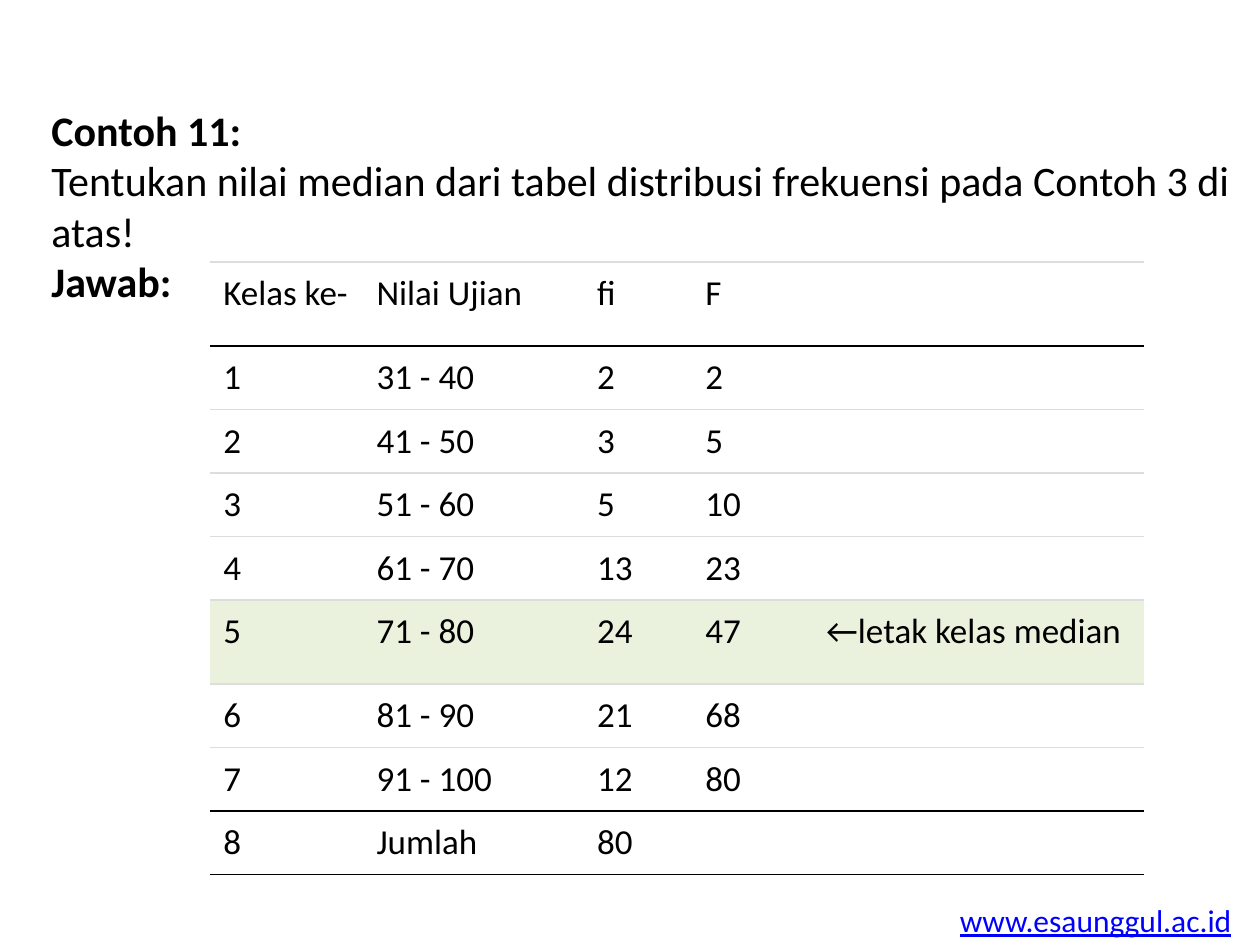
import pptx
import pptx.dml.color
import pptx.oxml
import pptx.oxml.ns
import pptx.util

Pt = pptx.util.Pt
RGBColor = pptx.dml.color.RGBColor

BLACK = RGBColor(0x00, 0x00, 0x00)
GREY = RGBColor(0xDD, 0xDD, 0xDD)
LINK_BLUE = RGBColor(0x00, 0x00, 0xFF)
MEDIAN_GREEN = RGBColor(0xEA, 0xF1, 0xDD)

QUESTION = [
    ("Contoh 11:", True),
    ("Tentukan nilai median dari tabel distribusi frekuensi pada Contoh 3 di atas!", False),
    ("Jawab:", True),
]
WEBSITE = "www.esaunggul.ac.id"
FREQUENCIES = [
    ("Kelas ke-", "Nilai Ujian", "fi", "F", ""),
    ("1", "31 - 40", "2", "2", ""),
    ("2", "41 - 50", "3", "5", ""),
    ("3", "51 - 60", "5", "10", ""),
    ("4", "61 - 70", "13", "23", ""),
    ("5", "71 - 80", "24", "47", "←letak kelas median"),
    ("6", "81 - 90", "21", "68", ""),
    ("7", "91 - 100", "12", "80", ""),
    ("8", "Jumlah", "80", "", ""),
]
MEDIAN_ROW = 5
TALL_ROWS = (0, MEDIAN_ROW)
COLUMN_WIDTHS = (87.6, 126, 61.9, 69.1, 189.4)
TALL_HEIGHT, ROW_HEIGHT = 48, 36.3
TABLE_LEFT, TABLE_TOP = 120, 149.8
# Rules counted from the top edge of the table
BLACK_RULES = (1, len(FREQUENCIES) - 1, len(FREQUENCIES))
CELL_MARGINS = {"margin_left": 7.6, "margin_right": 7.6, "margin_top": 5.95, "margin_bottom": 5.95}


def write(paragraph, text, size, color=BLACK, bold=False, underline=False):
    run = paragraph.add_run()
    run.text = text
    values = {"name": "Calibri", "size": Pt(size), "bold": bold, "underline": underline}
    for name, value in values.items():
        setattr(run.font, name, value)
    run.font.color.rgb = color


def add_text_frame(slide, left, top, width, height, wrap):
    shape = slide.shapes.add_textbox(Pt(left), Pt(top), Pt(width), Pt(height))
    shape.text_frame.word_wrap = wrap
    return shape.text_frame


def set_borders(cell, top, bottom):
    """Draw the horizontal borders and hide the vertical ones; call before filling the cell."""
    properties = cell._tc.get_or_add_tcPr()
    for side, color in (("L", None), ("R", None), ("T", top), ("B", bottom)):
        paint = f'<a:solidFill><a:srgbClr val="{color}"/></a:solidFill>' if color else "<a:noFill/>"
        properties.append(pptx.oxml.parse_xml(
            f'<a:ln{side} {pptx.oxml.ns.nsdecls("a")} w="{Pt(1)}">{paint}</a:ln{side}>'))


def add_frequency_table(slide):
    heights = [TALL_HEIGHT if row in TALL_ROWS else ROW_HEIGHT for row in range(len(FREQUENCIES))]
    table = slide.shapes.add_table(
        len(heights), len(COLUMN_WIDTHS), Pt(TABLE_LEFT), Pt(TABLE_TOP),
        Pt(sum(COLUMN_WIDTHS)), Pt(sum(heights))).table
    table.first_row = table.horz_banding = False
    for column, width in zip(table.columns, COLUMN_WIDTHS):
        column.width = Pt(width)
    rules = [BLACK if rule in BLACK_RULES else GREY for rule in range(len(heights) + 1)]

    for row, texts in enumerate(FREQUENCIES):
        table.rows[row].height = Pt(heights[row])
        for column, text in enumerate(texts):
            cell = table.cell(row, column)
            for name, value in CELL_MARGINS.items():
                setattr(cell, name, Pt(value))
            set_borders(cell, rules[row], rules[row + 1])
            if row == MEDIAN_ROW:
                cell.fill.solid()
                cell.fill.fore_color.rgb = MEDIAN_GREEN
            else:
                cell.fill.background()
            if text:
                write(cell.text_frame.paragraphs[0], text, 20)


def main():
    presentation = pptx.Presentation()
    presentation.slide_width, presentation.slide_height = Pt(720), Pt(540)
    slide = presentation.slides.add_slide(presentation.slide_layouts[6])

    website = add_text_frame(slide, 541.4, 511.2, 171.4, 28.8, False)
    write(website.paragraphs[0], WEBSITE, 18, LINK_BLUE, underline=True)

    question = add_text_frame(slide, 22.3, 56.2, 697.7, 123.8, True)
    for index, (text, bold) in enumerate(QUESTION):
        paragraph = question.add_paragraph() if index else question.paragraphs[0]
        write(paragraph, text, 24, bold=bold)

    add_frequency_table(slide)
    presentation.save("out.pptx")


if __name__ == "__main__":
    main()
